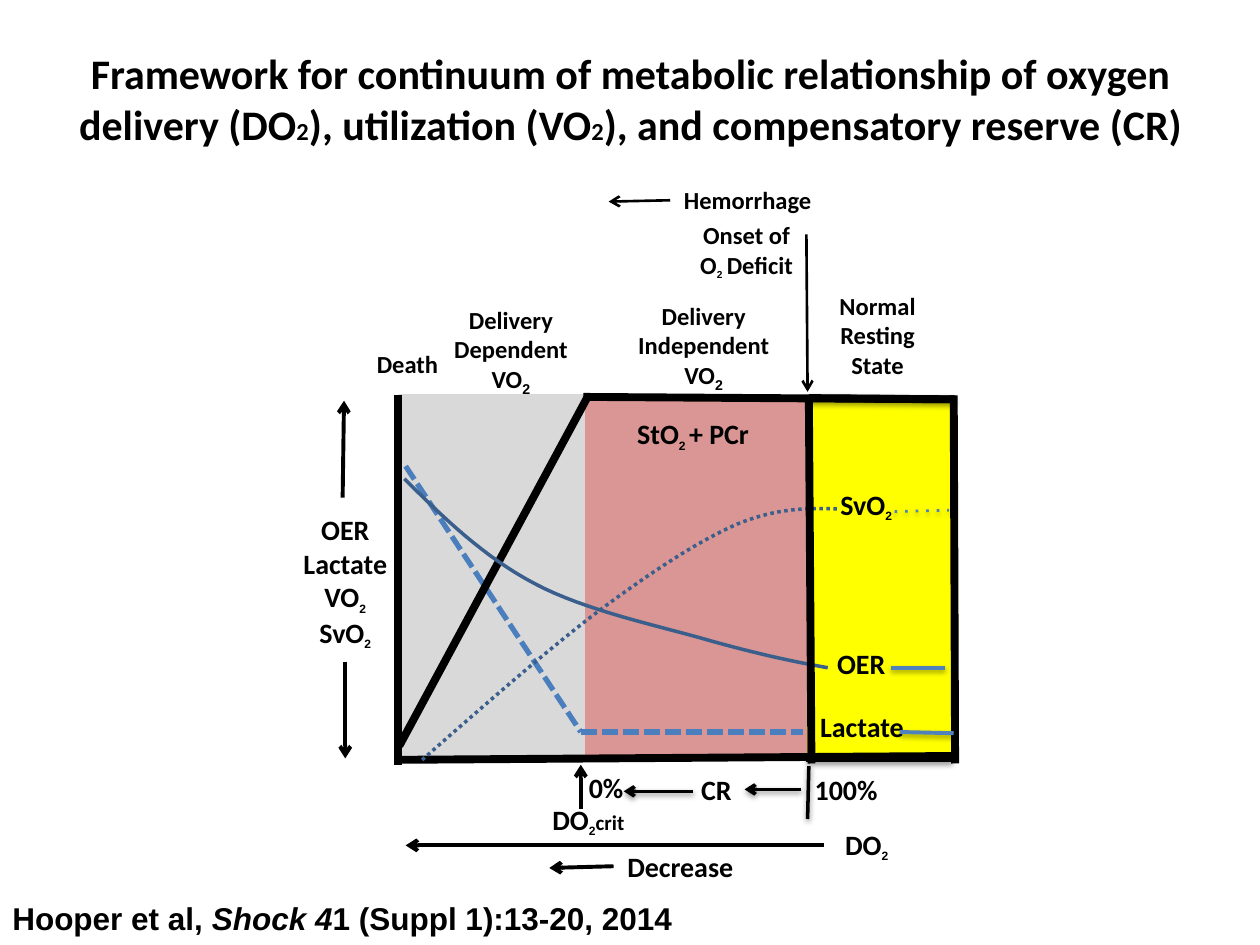
from dataclasses import dataclass
from typing import Optional

from lxml.etree import SubElement
from pptx import Presentation
from pptx.dml.color import RGBColor
from pptx.enum.shapes import MSO_CONNECTOR, MSO_SHAPE
from pptx.enum.text import MSO_ANCHOR, MSO_AUTO_SIZE, PP_ALIGN
from pptx.oxml.ns import qn
from pptx.util import Pt

BLACK = RGBColor(0, 0, 0)
YELLOW = RGBColor(0xFF, 0xFF, 0x00)
GREY = RGBColor(0xD9, 0xD9, 0xD9)
PINK = RGBColor(0xD9, 0x96, 0x94)
LACTATE_BLUE = RGBColor(0x4B, 0x7E, 0xBC)
CURVE_BLUE = RGBColor(0x3A, 0x5F, 0x8C)
STUB_BLUE = RGBColor(0x4F, 0x81, 0xBD)
LEFT, RIGHT = 1, 3


@dataclass
class Run:
    text: str
    size: Optional[float] = None
    subscript: bool = False
    italic: bool = False


@dataclass
class Label:
    box: tuple
    paragraphs: list
    size: float = 16


@dataclass
class Line:
    start: tuple
    end: tuple
    width: float = 4.5
    color: RGBColor = BLACK
    dash: str = ""
    arrow: bool = False
    shadow: bool = False
    begin_label: str = ""
    end_label: str = ""


@dataclass
class Curve:
    start: tuple
    segments: list
    dash: str = ""


def sub(size: Optional[float] = 12, text: str = "2") -> Run:
    return Run(text, size, subscript=True)


def fill_paragraph(paragraph, runs: list, size: float, font_name: str = "Calibri",
                   alignment=PP_ALIGN.CENTER) -> None:
    paragraph.alignment = alignment
    font = paragraph.font
    font.name, font.size, font.bold = font_name, Pt(size), True
    font.color.rgb = BLACK
    for item in runs:
        run = paragraph.add_run()
        run.text = item.text
        if item.size:
            run.font.size = Pt(item.size)
        if item.italic:
            run.font.italic = True
        if item.subscript:
            run.font.name = "Arial"
            run._r.get_or_add_rPr().set("baseline", "-25000")


def add_label(slide, label: Label):
    shape = slide.shapes.add_textbox(*map(Pt, label.box))
    frame = shape.text_frame
    frame.word_wrap = False
    for index, runs in enumerate(label.paragraphs):
        paragraph = frame.add_paragraph() if index else frame.paragraphs[0]
        fill_paragraph(paragraph, runs, label.size)
    return shape


def style_line(line, width: float, color: RGBColor, dash: str) -> None:
    line.width = Pt(width)
    line.color.rgb = color
    if dash:
        SubElement(line._get_or_add_ln(), qn("a:prstDash"), val=dash)


def add_line(slide, line: Line, labels: dict) -> None:
    connector = slide.shapes.add_connector(
        MSO_CONNECTOR.STRAIGHT, *map(Pt, line.start + line.end))
    if line.begin_label:
        side = RIGHT if line.start[0] < line.end[0] else LEFT
        connector.begin_connect(labels[line.begin_label], side)
    if line.end_label:
        connector.end_connect(labels[line.end_label], RIGHT)
    style_line(connector.line, line.width, line.color, line.dash)
    if line.arrow:
        SubElement(connector.line._get_or_add_ln(), qn("a:tailEnd"), type="arrow")
    effects = SubElement(connector._element.spPr, qn("a:effectLst"))
    if line.shadow:
        shadow = SubElement(effects, qn("a:outerShdw"), blurRad=str(Pt(3.1)),
                            dist=str(Pt(1.6)), dir="5400000", rotWithShape="0")
        color = SubElement(shadow, qn("a:srgbClr"), val="000000")
        SubElement(color, qn("a:alpha"), val="38000")


def add_region(slide, box: tuple, color: RGBColor) -> None:
    shape = slide.shapes.add_shape(MSO_SHAPE.RECTANGLE, *map(Pt, box))
    shape.shadow.inherit = False
    shape.fill.solid()
    shape.fill.fore_color.rgb = color
    style_line(shape.line, 2, color, "")


def add_curve(slide, curve: Curve, steps: int = 16) -> None:
    """Draw cubic Bezier segments as a finely stepped outline."""
    points, current = [], curve.start
    for first, second, end in curve.segments:
        for step in range(1, steps + 1):
            t = step / steps
            weights = ((1 - t) ** 3, 3 * t * (1 - t) ** 2, 3 * t * t * (1 - t), t ** 3)
            corners = (current, first, second, end)
            points.append(tuple(Pt(sum(w * c[axis] for w, c in zip(weights, corners)))
                                for axis in (0, 1)))
        current = end
    builder = slide.shapes.build_freeform(*map(Pt, curve.start))
    builder.add_line_segments(points, close=False)
    shape = builder.convert_to_shape()
    shape.shadow.inherit = False
    shape.fill.background()
    style_line(shape.line, 2, CURVE_BLUE, curve.dash)


REGIONS = [((460.8, 229, 83.5, 203), YELLOW), ((228.2, 226, 113, 207.4), GREY),
           ((335.5, 229, 124.6, 203.8), PINK)]

FRAME = [
    Line((460.8, 433.4), (544.3, 433.4), shadow=True),
    Line((462.2, 227.5), (545.8, 228.2), shadow=True),
    Line((228.2, 434.2), (545, 432)),
    Line((231.8, 266.4), (331.9, 418.3), 3, LACTATE_BLUE, "sysDash"),
    Line((545, 228.2), (333.4, 226.8)),
    Line((336.2, 226), (228.2, 426.2)),
    Line((545.8, 436.3), (545, 226)),
    Line((227.5, 437), (227.5, 226)),
]

CURVES = [
    # SvO2
    Curve((241.2, 434.2), [((276.5, 403.2), (311.8, 372.2), (342, 349.2)),
                           ((372.2, 326.9), (398.2, 309.6), (421.2, 299.5)),
                           ((444.2, 290.2), (461.5, 290.2), (479.5, 290.9))], "sysDot"),
    # OER
    Curve((231.1, 273.6), [((253.4, 295.9), (276.5, 318.2), (305.3, 333.4)),
                           ((334.8, 349.2), (377.3, 357.8), (404.6, 365.8)),
                           ((432.7, 373.7), (452.9, 378), (473, 381.6))]),
]

LABELS = {
    "tissue": Label((347.8, 234.7, 96.5, 26.6), [[Run("StO"), sub(text="2 "), Run("+ PCr")]]),
    "normal": Label((472.3, 162.7, 58.3, 58.3),
                    [[Run("Normal")], [Run("Resting")], [Run("State")]], 14),
    "dependent": Label((252, 170.6, 80, 58.3),
                       [[Run("Delivery")], [Run("Dependent")], [Run("VO"), sub(None)]], 14),
    "independent": Label((357.1, 168.5, 90, 58.3),
                         [[Run("Delivery")], [Run("Independent")], [Run("VO"), sub(None)]], 14),
    "axis": Label((165.6, 289.4, 63.4, 85),
                  [[Run("OER")], [Run("Lactate")], [Run("VO"), sub()], [Run("SvO"), sub()]]),
    "critical": Label((306.7, 455, 59, 26.6), [[Run("DO"), sub(), Run("crit", 12)]]),
    "onset": Label((392.4, 122.4, 68.4, 41),
                   [[Run("Onset of")], [Run("O"), sub(10), Run(" ", 11), Run("Deficit")]], 14),
    "death": Label((208, 195.8, 49.7, 24.5), [[Run("Death")]], 14),
    "delivery": Label((475.2, 469.4, 40.3, 26.6), [[Run("DO"), sub()]]),
    "decrease": Label((350.6, 481.7, 76.3, 26.6), [[Run("Decrease")]]),
    "hemorrhage": Label((383, 102.2, 88.6, 24.5), [[Run("Hemorrhage")]], 14),
    "saturation": Label((471.6, 275, 46.8, 26.6), [[Run("SvO"), sub()]]),
    "extraction": Label((470.9, 365.8, 42.5, 26.6), [[Run("OER")]]),
    "lactate": Label((460.8, 401.8, 63.4, 26.6), [[Run("Lactate")]]),
    "zero": Label((329, 437, 34.6, 26.6), [[Run("0%")]]),
    "reserve": Label((393.1, 437.8, 32.4, 26.6), [[Run("CR")]]),
    "full": Label((457.9, 437.8, 51.1, 26.6), [[Run("100%")]]),
}

LINES = [
    # Continuations of the curves in the resting state
    Line((511.2, 292.3), (542.2, 291.6), 1.5, STUB_BLUE, "dot", shadow=True),
    Line((509, 381.6), (540, 381.6), 2.25, STUB_BLUE, shadow=True),
    Line((331.9, 418.3), (458.6, 418.3), 3, LACTATE_BLUE, "sysDash"),
    Line((514.1, 418.3), (545, 419), 2.25, STUB_BLUE, shadow=True),
    # Axis arrows
    Line((195.8, 284.4), (196.6, 229), 2.25, arrow=True),
    Line((197.3, 378), (197.3, 433.4), 2.25, arrow=True),
    Line((331.9, 462.2), (331.9, 437), 2.25, arrow=True),
    Line((470.9, 483.1), (231.8, 483.1), 2.25, arrow=True),
    Line((350.6, 495), (313.9, 496), 2.25, arrow=True, begin_label="decrease"),
    # Hemorrhage and onset arrows
    Line((383, 114.5), (347.8, 115.2), 1.5, arrow=True, begin_label="hemorrhage"),
    Line((460.8, 133.9), (461.5, 223.9), 1.5, arrow=True),
    # Compensatory reserve scale
    Line((462.2, 437.8), (461.5, 468), 2, shadow=True),
    Line((457.9, 451), (425.5, 451), 2, arrow=True, shadow=True,
         begin_label="full", end_label="reserve"),
    Line((396, 452.2), (356.4, 452.2), 2, arrow=True, shadow=True),
    # Boundary of the resting state
    Line((463.7, 436.3), (462.2, 226)),
]


def main() -> None:
    presentation = Presentation()
    presentation.slide_width, presentation.slide_height = Pt(720), Pt(540)
    slide = presentation.slides.add_slide(presentation.slide_layouts[5])

    # Title
    title = slide.shapes.title
    title.left, title.top, title.width, title.height = map(Pt, (10.8, 23.8, 699.1, 65.5))
    title.text_frame.auto_size = MSO_AUTO_SIZE.NONE
    title.text_frame.vertical_anchor = MSO_ANCHOR.TOP
    fill_paragraph(title.text_frame.paragraphs[0], [
        Run("Framework for continuum of metabolic relationship of oxygen delivery (DO"),
        Run("2", 14), Run("), utilization (VO"), Run("2", 14),
        Run("), and compensatory reserve (CR)")], 24)

    # Diagram
    for box, color in REGIONS:
        add_region(slide, box, color)
    for line in FRAME:
        add_line(slide, line, {})
    for curve in CURVES:
        add_curve(slide, curve)
    labels = {name: add_label(slide, label) for name, label in LABELS.items()}
    for line in LINES:
        add_line(slide, line, labels)

    # Citation
    citation = slide.shapes.add_textbox(*map(Pt, (0, 515.5, 410.4, 24.5)))
    citation.text_frame.word_wrap = True
    paragraph = citation.text_frame.paragraphs[0]
    paragraph.line_spacing = 0.75
    fill_paragraph(paragraph, [Run("Hooper et al, "), Run("Shock 4", italic=True),
                               Run("1 (Suppl 1):13-20, 2014")], 18, "Arial", PP_ALIGN.LEFT)

    presentation.save("out.pptx")


if __name__ == "__main__":
    main()
